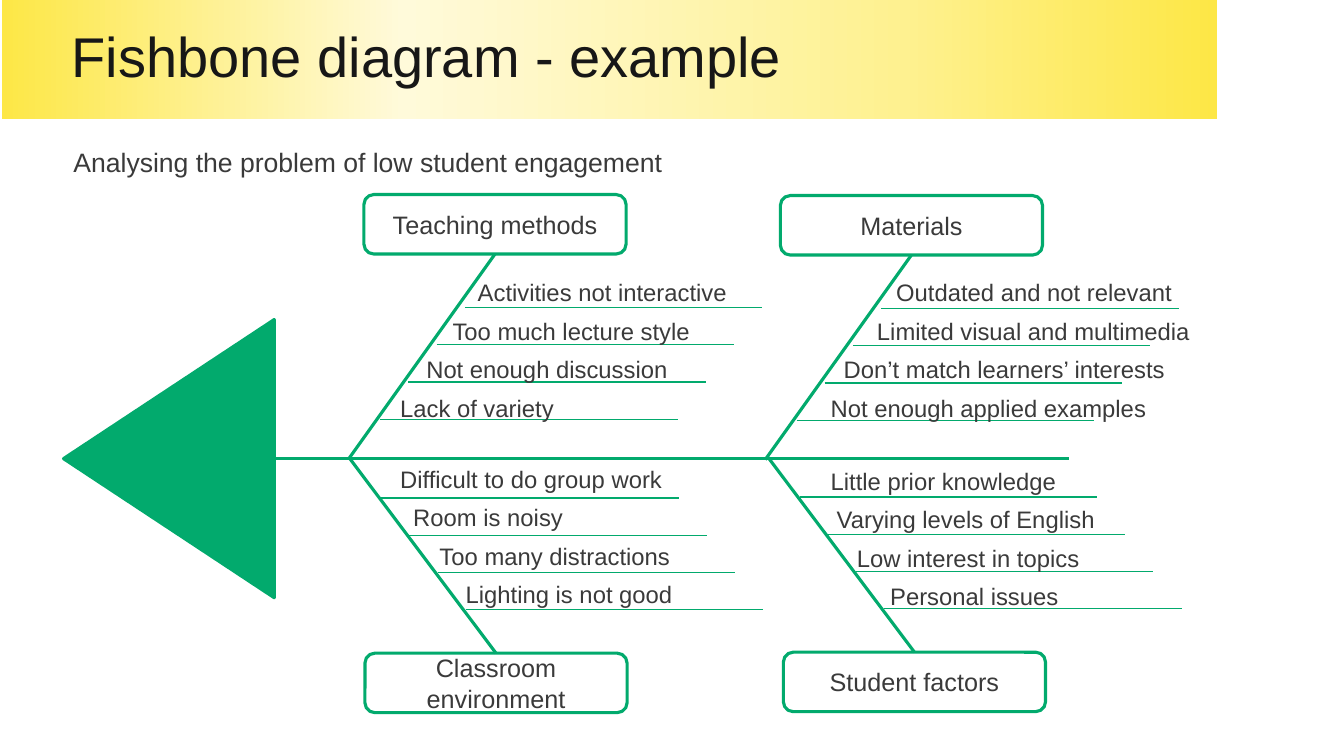
from lxml import etree
from pptx import Presentation
from pptx.dml.color import RGBColor
from pptx.enum.shapes import MSO_CONNECTOR, MSO_SHAPE
from pptx.enum.text import MSO_ANCHOR, MSO_AUTO_SIZE, PP_ALIGN
from pptx.oxml.ns import qn
from pptx.util import Emu, Pt

STRAIGHT = MSO_CONNECTOR.STRAIGHT
ROUNDED, TRIANGLE = MSO_SHAPE.ROUNDED_RECTANGLE, MSO_SHAPE.ISOSCELES_TRIANGLE
MIDDLE, GROW, NO_FIT = MSO_ANCHOR.MIDDLE, MSO_AUTO_SIZE.SHAPE_TO_FIT_TEXT, MSO_AUTO_SIZE.NONE
LEFT, CENTER = PP_ALIGN.LEFT, PP_ALIGN.CENTER

PX = 9144
FONT = "Arial"
GREEN, WHITE, GREY, BLACK = "02AA6D", "FFFFFF", "3A3A3A", "171717"
BANNER_STOPS = [(0, "FDE746"), (33, "FFFADA"), (74, "FEF190"), (100, "FDE746")]
THICK, THIN = 2.25, 0.85
SPINE_Y = 455
BOX_WIDTH, BOX_HEIGHT = 260, 59
LINE_WIDTH, LINE_STEP, LINE_PITCH = 295, 28, 37

BONES = [
    ("Teaching methods", (361, 193), True, (387, 271),
     [("Activities not interactive", 77), ("Too much lecture style", 52),
      ("Not enough discussion", 26), ("Lack of variety", 0)]),
    ("Materials", (774, 194), True, (814, 271),
     [("Outdated and not relevant", 65), ("Limited visual and multimedia", 46),
      ("Don’t match learners’ interests", 13), ("Not enough applied examples", 0)]),
    ("Classroom environment", (362, 648), False, (387, 456),
     [("Difficult to do group work", 0), ("Room is noisy", 13),
      ("Too many distractions", 39), ("Lighting is not good", 65)]),
    ("Student factors", (777, 647), False, (814, 458),
     [("Little prior knowledge", 0), ("Varying levels of English", 6),
      ("Low interest in topics", 26), ("Personal issues", 59)]),
]


def px(*lengths):
    """Turn px lengths into EMU."""
    return [Emu(round(length * PX)) for length in lengths]


def colour(value):
    """Turn a hex string into a colour."""
    return RGBColor.from_string(value)


def write(para, text, size, ink=GREY, align=LEFT, indent=0):
    """Add one formatted run to a paragraph."""
    properties = para._p.get_or_add_pPr()
    properties.set("marL", str(px(indent)[0]))
    properties.set("indent", "0")
    para.alignment = align
    span = para.add_run()
    span.text = text
    span.font.size = Pt(size)
    span.font.name = FONT
    span.font.color.rgb = colour(ink)


def add_line(page, start, end, weight):
    """Draw a green line without a shadow."""
    line = page.shapes.add_connector(STRAIGHT, *px(*start, *end))
    line.line.color.rgb = colour(GREEN)
    line.line.width = Pt(weight)
    etree.SubElement(line._element.spPr, qn("a:effectLst"))
    return line


def add_solid(page, kind, box, fill):
    """Draw a filled shape with a green outline."""
    shape = page.shapes.add_shape(kind, *px(*box))
    shape.shadow.inherit = False
    shape.fill.solid()
    shape.fill.fore_color.rgb = colour(fill)
    shape.line.color.rgb = colour(GREEN)
    shape.line.width = Pt(THICK)
    return shape


def add_list(page, box, items, size):
    """Write one indented paragraph for each item."""
    frame = page.shapes.add_textbox(*px(*box)).text_frame
    frame.word_wrap = True
    frame.auto_size = GROW
    for index, (text, indent) in enumerate(items):
        para = frame.add_paragraph() if index else frame.paragraphs[0]
        if index:
            para.space_before = Pt(7)
        write(para, text, size, indent=indent)


def add_banner(page, box, text):
    """Set the title on a gradient band."""
    title = page.shapes.title
    title.left, title.top, title.width, title.height = px(*box)
    title.fill.gradient()
    title.fill.gradient_angle = 0
    stops = title._element.spPr.find(qn("a:gradFill")).find(qn("a:gsLst"))
    for stop in list(stops):
        stops.remove(stop)
    for position, value in BANNER_STOPS:
        stop = etree.SubElement(stops, qn("a:gs"), pos=str(position * 1000))
        etree.SubElement(stop, qn("a:srgbClr"), val=value)
    frame = title.text_frame
    frame.word_wrap = True
    frame.auto_size = NO_FIT
    frame.vertical_anchor = MIDDLE
    para = frame.paragraphs[0]
    write(para, text, 40, BLACK, indent=59)
    para.line_spacing = 0.9


def add_head(page, box):
    """Draw the fish head pointing left inside the box."""
    left, top, width, height = box
    shift = (height - width) / 2
    head = add_solid(page, TRIANGLE, (left - shift, top + shift, height, width), GREEN)
    head.rotation = 270


def add_bone(page, label, corner, is_upper, list_corner, causes):
    """Draw a category box, its rib, the cause lines and the causes."""
    left, top = corner
    box = add_solid(page, ROUNDED, (left, top, BOX_WIDTH, BOX_HEIGHT), WHITE)
    box.text_frame.word_wrap = True
    box.text_frame.vertical_anchor = MIDDLE
    write(box.text_frame.paragraphs[0], label, 18, align=CENTER)

    side, edge, tip = (2, top + BOX_HEIGHT, top + 262) if is_upper else (0, top, top - 193)
    rib = add_line(page, (left + BOX_WIDTH / 2, edge), (left - 15, tip), THICK)
    rib.begin_connect(box, side)

    first_y = top + 112 if is_upper else top - 154
    for index in range(len(causes)):
        steps = len(causes) - 1 - index if is_upper else index
        x, y = left + 16 + LINE_STEP * steps, first_y + LINE_PITCH * index
        add_line(page, (x, y), (x + LINE_WIDTH, y), THIN)
    add_list(page, (*list_corner, 406 if is_upper else 375, 150), causes, 17)


def build_fishbone(page):
    """Build the whole fishbone page."""
    add_banner(page, (2, 0, 1205, 118), "Fishbone diagram - example")
    add_line(page, (1060, SPINE_Y), (273, SPINE_Y), THICK)
    add_head(page, (63, 317, 209, 276))
    for bone in BONES:
        add_bone(page, *bone)
    add_list(page, (63, 140, 991, 42),
             [("Analysing the problem of low student engagement", 0)], 19)


def main():
    """Create and save the deck."""
    deck = Presentation()
    deck.slide_width, deck.slide_height = px(1333, 750)
    build_fishbone(deck.slides.add_slide(deck.slide_layouts[5]))
    deck.save("out.pptx")


if __name__ == "__main__":
    main()
